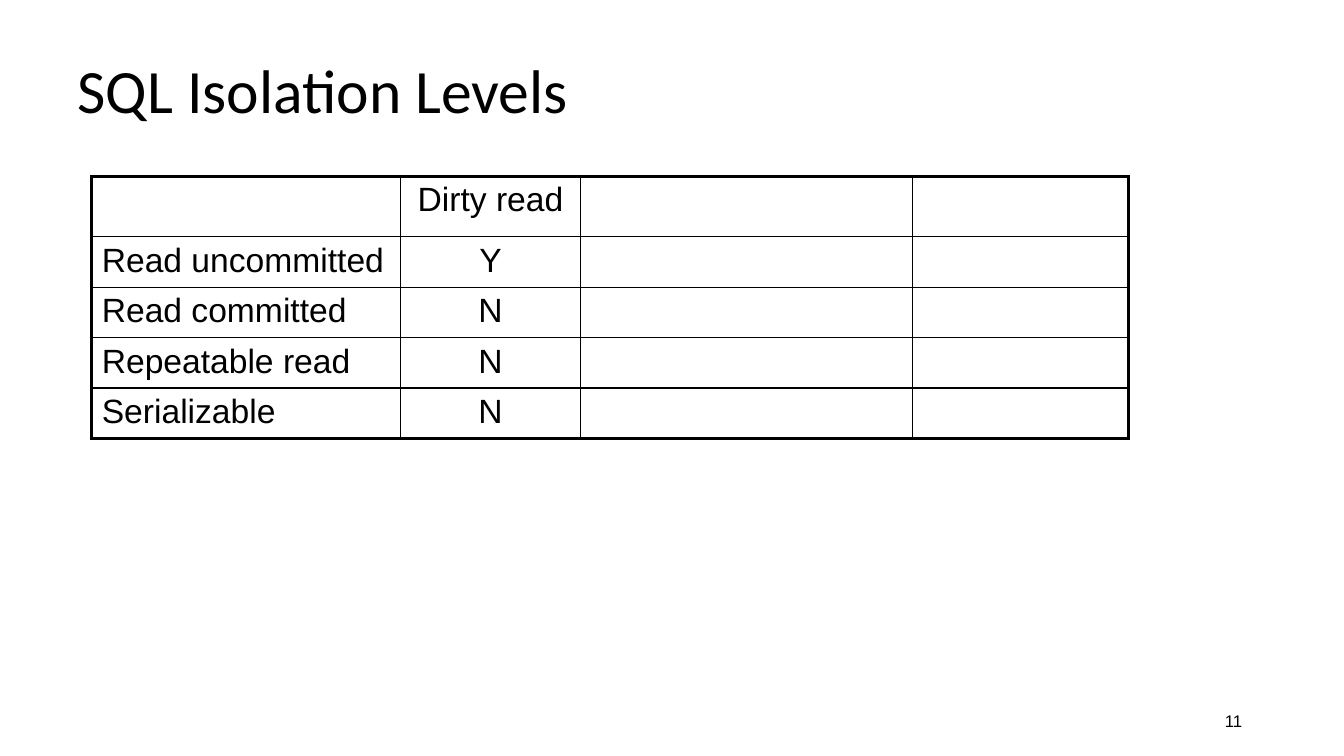
from lxml.etree import SubElement
from pptx import Presentation
from pptx.dml.color import RGBColor
from pptx.enum.text import MSO_ANCHOR, PP_ALIGN
from pptx.oxml.ns import qn
from pptx.util import Inches, Pt

BLACK = "000000"
COLUMN_WIDTHS = [3.06, 1.79, 3.29, 2.14]
ROW_HEIGHTS = [0.6, 0.5, 0.5, 0.5, 0.5]
ISOLATION_LEVELS = [
    ["", "Dirty read", "", ""],
    ["Read uncommitted", "Y", "", ""],
    ["Read committed", "N", "", ""],
    ["Repeatable read", "N", "", ""],
    ["Serializable", "N", "", ""],
]


def color(value):
    """Turn a hex string into a colour."""
    return RGBColor.from_string(value)


def write(text_frame, text, size, font, alignment):
    """Put one formatted paragraph into a text frame."""
    text_frame.text = text
    paragraph = text_frame.paragraphs[0]
    paragraph.alignment = alignment
    for run in paragraph.runs:
        run.font.size = Pt(size)
        run.font.name = font
        run.font.color.rgb = color(BLACK)
    return paragraph


def place(shape, left, top, width, height):
    """Move and size a shape, in inches."""
    shape.left, shape.top = Inches(left), Inches(top)
    shape.width, shape.height = Inches(width), Inches(height)


def add_title(slide, text):
    """Fill the title placeholder."""
    title = slide.shapes.title
    place(title, 0.67, 0.3, 12, 1.25)
    title.text_frame.vertical_anchor = MSO_ANCHOR.MIDDLE
    paragraph = write(title.text_frame, text, 44, "Calibri", PP_ALIGN.LEFT)
    paragraph.line_spacing = 0.9


def add_slide_number(slide, text):
    """Add the slide number at the lower right."""
    box = slide.shapes.add_textbox(Inches(9.42), Inches(6.95), Inches(3), Inches(0.4))
    box.text_frame.word_wrap = True
    box.text_frame.vertical_anchor = MSO_ANCHOR.MIDDLE
    write(box.text_frame, text, 12, "Arial", PP_ALIGN.RIGHT)


def set_space_before(paragraph, percent):
    """Set the space before a paragraph as a share of its line."""
    paragraph.space_before = Pt(0)
    spacing = paragraph._p.pPr.find(qn("a:spcBef"))
    spacing.remove(spacing[0])
    SubElement(spacing, qn("a:spcPct"), val=str(percent * 1000))


def set_borders(cell, widths):
    """Draw the cell's sides with the given widths in points."""
    properties = cell._tc.get_or_add_tcPr()
    for index, (side, width) in enumerate(widths.items()):
        line = properties.makeelement(qn(f"a:ln{side}"), {"w": str(Pt(width))})
        fill = SubElement(line, qn("a:solidFill"))
        SubElement(fill, qn("a:srgbClr"), val=BLACK)
        properties.insert(index, line)


def add_level_table(slide, rows):
    """Add the table with a heavy frame and thin inner lines."""
    last_row, last_column = len(rows) - 1, len(COLUMN_WIDTHS) - 1
    frame = slide.shapes.add_table(
        len(rows), len(COLUMN_WIDTHS), Inches(0.91), Inches(1.75),
        Inches(sum(COLUMN_WIDTHS)), Inches(sum(ROW_HEIGHTS)))
    table = frame.table
    table.first_row = table.horz_banding = False
    for column, width in zip(table.columns, COLUMN_WIDTHS):
        column.width = Inches(width)
    for row, height in zip(table.rows, ROW_HEIGHTS):
        row.height = Inches(height)
    for row_index, texts in enumerate(rows):
        for column_index, text in enumerate(texts):
            cell = table.cell(row_index, column_index)
            cell.fill.background()
            outer = {"L": column_index == 0, "R": column_index == last_column,
                     "T": row_index == 0, "B": row_index == last_row}
            set_borders(cell, {side: 2.25 if edge else 1 for side, edge in outer.items()})
            if text:
                alignment = PP_ALIGN.CENTER if column_index else PP_ALIGN.LEFT
                paragraph = write(cell.text_frame, text, 24, "Arial", alignment)
                set_space_before(paragraph, 20)


def main():
    """Build the slide and save it."""
    presentation = Presentation()
    presentation.slide_width, presentation.slide_height = Inches(13.33), Inches(7.5)
    slide = presentation.slides.add_slide(presentation.slide_layouts[5])
    slide.background.fill.solid()
    slide.background.fill.fore_color.rgb = color("FFFFFF")
    add_title(slide, "SQL Isolation Levels")
    add_level_table(slide, ISOLATION_LEVELS)
    add_slide_number(slide, "11")
    presentation.save("out.pptx")


if __name__ == "__main__":
    main()
